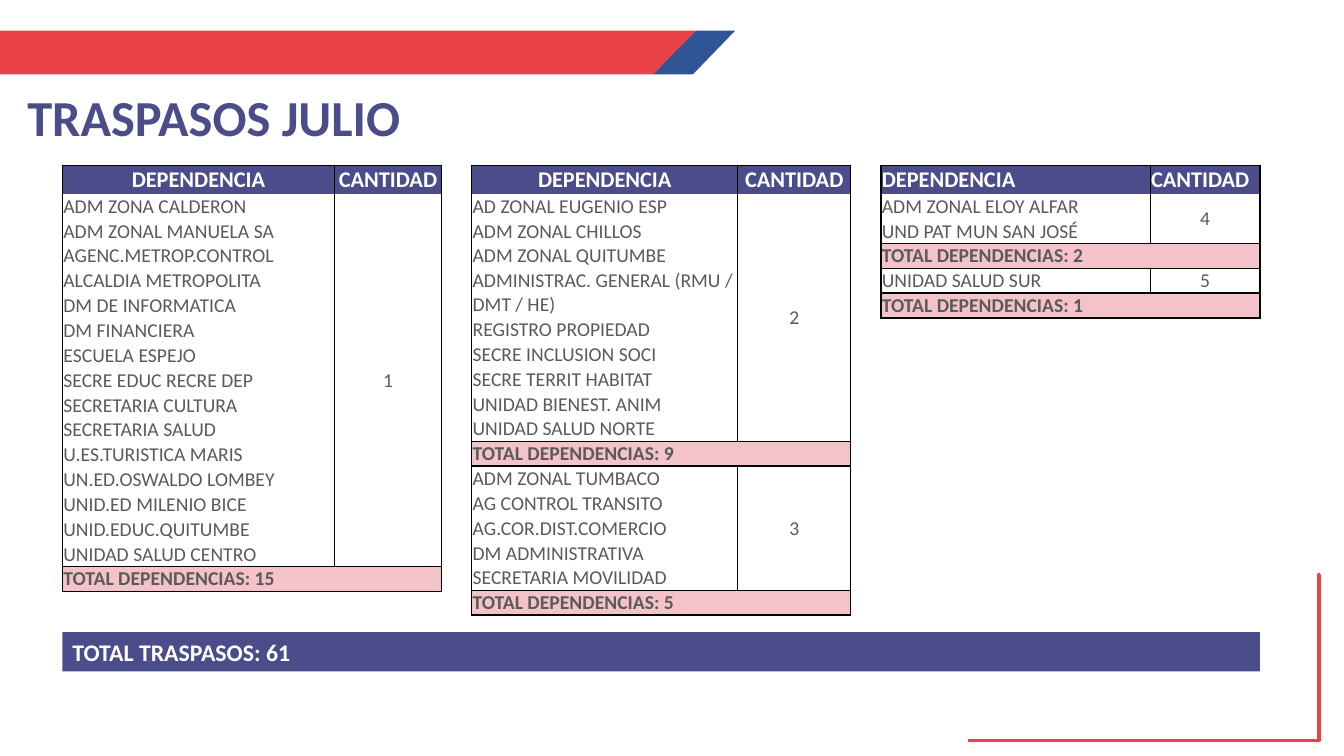
import lxml.etree
import pptx
import pptx.dml.color
import pptx.enum.shapes
import pptx.enum.text
import pptx.oxml.ns
import pptx.util

COLORS = {"red": "E94349", "blue": "2F5597", "indigo": "4B4C8A", "pink": "F4C3C9",
          "gray": "5A5A5A", "white": "FFFFFF", "black": "000000"}
FORMATS = {
    "title": {"size": pptx.util.Pt(36), "bold": True},
    "header": {"size": pptx.util.Pt(16), "bold": True},
    "item": {"size": pptx.util.Pt(14), "bold": False},
    "subtotal": {"size": pptx.util.Pt(14), "bold": True},
    "total": {"size": pptx.util.Pt(17), "bold": True},
}
LEFT = pptx.enum.text.PP_ALIGN.LEFT
CENTER = pptx.enum.text.PP_ALIGN.CENTER
MIDDLE = pptx.enum.text.MSO_ANCHOR.MIDDLE
TOP = pptx.enum.text.MSO_ANCHOR.TOP
NO_STYLE = "{2D5ABB26-0587-4C30-8999-92F81FD0307C}"

MARGIN, PITCH, PANEL = 4.65, 30.45, 28.2
TABLE_TOP, HEADER_ROW, ITEM_ROW = 21.87, 3.73, 3.2

PANELS = [
    (CENTER, 20.25, [
        ("1", ["ADM ZONA CALDERON", "ADM ZONAL MANUELA SA", "AGENC.METROP.CONTROL",
               "ALCALDIA METROPOLITA", "DM DE INFORMATICA", "DM FINANCIERA",
               "ESCUELA ESPEJO", "SECRE EDUC RECRE DEP", "SECRETARIA CULTURA",
               "SECRETARIA SALUD", "U.ES.TURISTICA MARIS", "UN.ED.OSWALDO LOMBEY",
               "UNID.ED MILENIO BICE", "UNID.EDUC.QUITUMBE", "UNIDAD SALUD CENTRO"], 15)]),
    (CENTER, 19.8, [
        ("2", ["AD ZONAL EUGENIO ESP", "ADM ZONAL CHILLOS", "ADM ZONAL QUITUMBE",
               "ADMINISTRAC. GENERAL (RMU / DMT / HE)", "REGISTRO PROPIEDAD",
               "SECRE INCLUSION SOCI", "SECRE TERRIT HABITAT", "UNIDAD BIENEST. ANIM",
               "UNIDAD SALUD NORTE"], 9),
        ("3", ["ADM ZONAL TUMBACO", "AG CONTROL TRANSITO", "AG.COR.DIST.COMERCIO",
               "DM ADMINISTRATIVA", "SECRETARIA MOVILIDAD"], 5)]),
    (LEFT, 20.03, [
        ("4", ["ADM ZONAL ELOY ALFAR", "UND PAT MUN SAN JOSÉ"], 2),
        ("5", ["UNIDAD SALUD SUR"], 1)]),
]


def rgb(color):
    return pptx.dml.color.RGBColor.from_string(COLORS[color])


def child(parent, tag, **attributes):
    return lxml.etree.SubElement(parent, pptx.oxml.ns.qn(tag), **attributes)


class TransferSlide:
    font = "Calibri"

    def __init__(self, deck):
        self.width, self.height = deck.slide_width, deck.slide_height
        self.slide = deck.slides.add_slide(deck.slide_layouts[5])
        self.shapes = self.slide.shapes

    def x(self, percent):
        return round(self.width * percent / 100)

    def y(self, percent):
        return round(self.height * percent / 100)

    def put_text(self, frame, text, style, color, align=LEFT):
        paragraph = frame.paragraphs[0]
        paragraph.alignment = align
        if not text:
            child(paragraph._p, "a:endParaRPr", sz=str(FORMATS[style]["size"].centipoints))
            return
        run = paragraph.add_run()
        run.text = text
        for name, value in {"name": self.font, **FORMATS[style]}.items():
            setattr(run.font, name, value)
        run.font.color.rgb = rgb(color)

    def paint(self, shape, color):
        shape.shadow.inherit = False
        shape.fill.solid()
        shape.fill.fore_color.rgb = rgb(color)
        shape.line.fill.background()

    def title(self, text, left, top, width, height):
        heading = self.shapes.title
        heading.left, heading.top = self.x(left), self.y(top)
        heading.width, heading.height = self.x(width), self.y(height)
        layout = {"auto_size": pptx.enum.text.MSO_AUTO_SIZE.NONE, "word_wrap": True,
                  "vertical_anchor": TOP, "margin_left": self.x(2.03)}
        for name, value in layout.items():
            setattr(heading.text_frame, name, value)
        heading.text_frame.paragraphs[0].line_spacing = 0.9
        self.put_text(heading.text_frame, text, "title", "indigo")

    def ribbon(self, corners, color):
        points = [(self.x(across), self.y(down)) for across, down in corners]
        outline = self.shapes.build_freeform(*points[0], scale=1.0)
        outline.add_line_segments(points[1:], close=True)
        self.paint(outline.convert_to_shape(), color)

    def corner(self, left, bottom, right, top, color):
        bend = self.shapes.add_connector(pptx.enum.shapes.MSO_CONNECTOR.ELBOW, self.x(left),
                                         self.y(bottom), self.x(right), self.y(top))
        bend.line.color.rgb = rgb(color)
        bend.line.width = pptx.util.Pt(2.25)
        adjustments = bend._element.spPr.prstGeom.get_or_add_avLst()
        child(adjustments, "a:gd", name="adj1", fmla="val 99600")
        child(bend._element.spPr, "a:effectLst")

    def bar(self, text, left, top, width, height):
        band = self.shapes.add_shape(pptx.enum.shapes.MSO_SHAPE.RECTANGLE, self.x(left),
                                     self.y(top), self.x(width), self.y(height))
        self.paint(band, "indigo")
        band.text_frame.word_wrap = True
        band.text_frame.vertical_anchor = MIDDLE
        self.put_text(band.text_frame, text, "total", "white")

    def cell(self, cell, text, style, color, sides, fill=None, align=LEFT, anchor=TOP):
        layout = {"margin_left": self.x(0.07), "margin_right": self.x(0.07),
                  "margin_top": self.y(0.13), "margin_bottom": 0, "vertical_anchor": anchor}
        for name, value in layout.items():
            setattr(cell, name, value)
        if fill:
            cell.fill.solid()
            cell.fill.fore_color.rgb = rgb(fill)
        else:
            cell.fill.background()
        self.put_text(cell.text_frame, text, style, color, align)
        properties = cell._tc.get_or_add_tcPr()
        for position, side in enumerate(sides):
            border = child(properties, f"a:ln{side}", w=str(pptx.util.Pt(1)))
            child(child(border, "a:solidFill"), "a:srgbClr", val=COLORS["black"])
            properties.insert(position, border)

    def table(self, left, top, width, name_width, groups, header_align):
        row_count = 1 + sum(len(names) + 1 for _, names, _ in groups)
        height = HEADER_ROW + ITEM_ROW * (row_count - 1)
        table = self.shapes.add_table(row_count, 2, self.x(left), self.y(top),
                                      self.x(width), self.y(height)).table
        table.first_row = table.horz_banding = False
        table._tbl.tblPr.find(pptx.oxml.ns.qn("a:tableStyleId")).text = NO_STYLE
        table.columns[0].width = self.x(name_width)
        table.columns[1].width = self.x(width - name_width)
        for index, row in enumerate(table.rows):
            row.height = self.y(ITEM_ROW if index else HEADER_ROW)
        for column, heading in enumerate(["DEPENDENCIA", "CANTIDAD"]):
            self.cell(table.cell(0, column), heading, "header", "white", "LRT",
                      "indigo", header_align)
        first = 1
        for quantity, names, count in groups:
            end = first + len(names)
            for row, name in enumerate(names, first):
                sides = "LRB" if row == end - 1 else "LR"
                self.cell(table.cell(row, 0), name, "item", "gray", sides)
                self.cell(table.cell(row, 1), quantity if row == first else "", "item", "gray",
                          "LRB" if row == first else sides, align=CENTER, anchor=MIDDLE)
            if len(names) > 1:
                table.cell(first, 1).merge(table.cell(end - 1, 1))
            for column, text in enumerate([f"TOTAL DEPENDENCIAS: {count}", ""]):
                self.cell(table.cell(end, column), text, "subtotal", "gray", "LRTB", "pink")
            table.cell(end, 0).merge(table.cell(end, 1))
            first = end + 1


def main():
    deck = pptx.Presentation()
    deck.slide_width, deck.slide_height = pptx.util.Inches(13.33), pptx.util.Inches(7.5)
    transfers = TransferSlide(deck)
    transfers.ribbon([(0, 4.05), (51.85, 4.05), (48.6, 9.85), (0, 9.85)], "red")
    transfers.ribbon([(51.8, 4.05), (54.7, 4.05), (51.55, 9.85), (48.6, 9.85)], "blue")
    transfers.corner(72, 98, 98.25, 76, "red")
    transfers.title("TRASPASOS JULIO", 0, 11.6, 43, 7.5)
    transfers.bar("TOTAL TRASPASOS: 61", MARGIN, 83.6, 2 * PITCH + PANEL, 5.2)
    for panel, (header_align, name_width, groups) in enumerate(PANELS):
        transfers.table(MARGIN + PITCH * panel, TABLE_TOP, PANEL, name_width, groups, header_align)
    deck.save("out.pptx")


if __name__ == "__main__":
    main()
